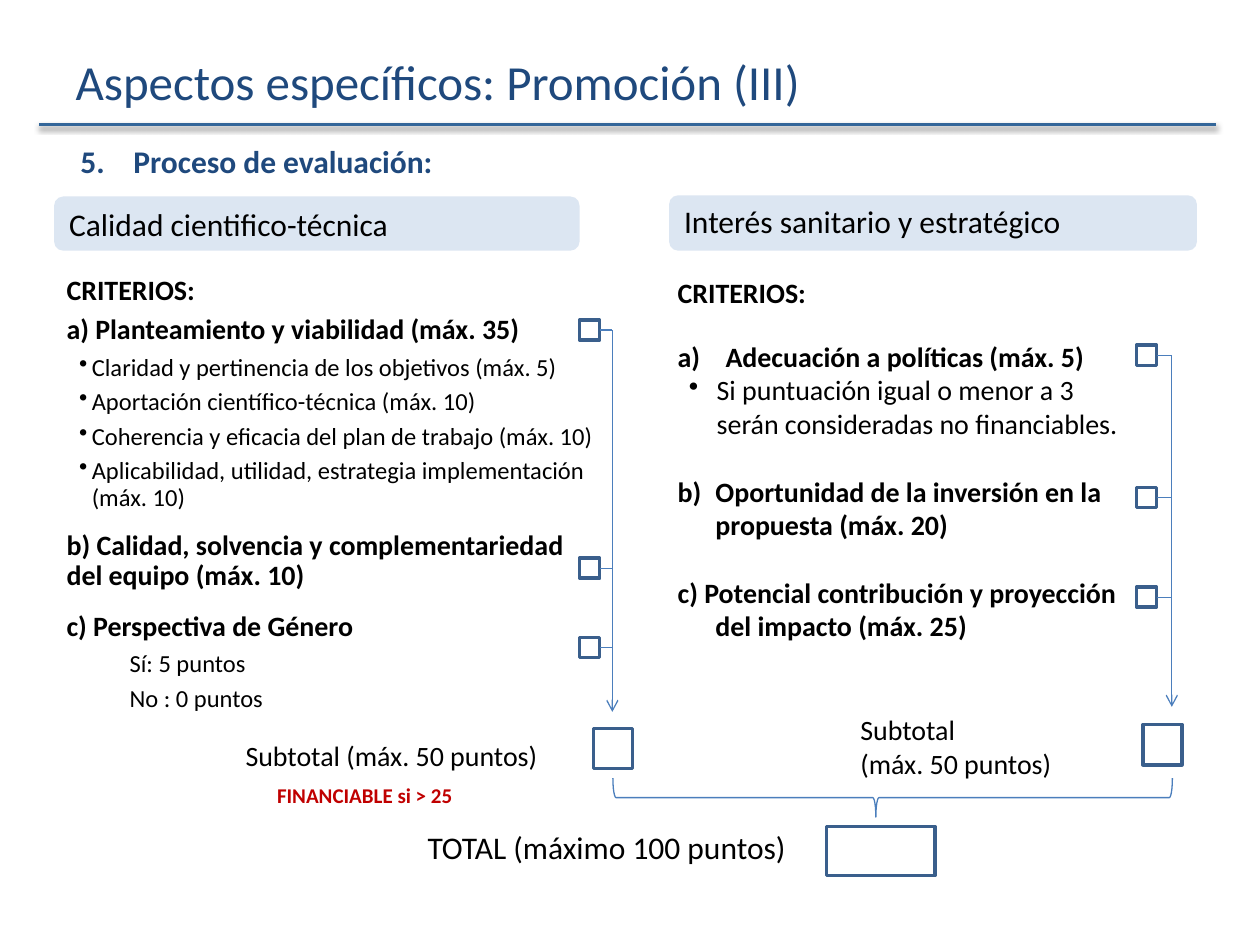
from lxml import etree
from pptx import Presentation
from pptx.dml.color import RGBColor
from pptx.enum.shapes import MSO_CONNECTOR, MSO_SHAPE
from pptx.enum.text import MSO_ANCHOR, PP_ALIGN
from pptx.oxml.ns import qn
from pptx.util import Inches, Pt

STRAIGHT = MSO_CONNECTOR.STRAIGHT
RECT, ROUNDED, BRACE = MSO_SHAPE.RECTANGLE, MSO_SHAPE.ROUNDED_RECTANGLE, MSO_SHAPE.LEFT_BRACE
TOP, MIDDLE = MSO_ANCHOR.TOP, MSO_ANCHOR.MIDDLE
LEFT, CENTER = PP_ALIGN.LEFT, PP_ALIGN.CENTER

FONT = "Calibri"
COLORS = {"navy": "1F497D", "rule": "336699", "box": "3A5F8C", "link": "4B7EBC",
          "header": "DCE6F2", "white": "FFFFFF", "black": "000000", "red": "C00000"}

# Content: each paragraph is (text, format values)
TITLE = "Aspectos específicos: Promoción (III)"
HEAD = {"size": 16, "bold": True, "spacing": 0.9, "after": 5.3}
ITEM = {"size": 14, "spacing": 0.9, "after": 4.6}
BULLET = {**ITEM, "margin": 0.2, "indent": -0.1, "bullet": "•"}
POINTS = {**ITEM, "margin": 0.5}
BOLD = {"size": 16, "bold": True}
HANGING = {**BOLD, "margin": 0.3, "indent": -0.3, "before": 19.5}

QUALITY = [
    ("CRITERIOS:", HEAD),
    ("a) Planteamiento y viabilidad (máx. 35)", HEAD),
    ("Claridad y pertinencia de los objetivos (máx. 5)", BULLET),
    ("Aportación científico-técnica (máx. 10)", BULLET),
    ("Coherencia y eficacia del plan de trabajo (máx. 10)", BULLET),
    ("Aplicabilidad, utilidad, estrategia implementación (máx. 10)", {**BULLET, "after": 0}),
    ("b) Calidad, solvencia y complementariedad del equipo (máx. 10)",
     {**HEAD, "before": 11.5, "after": 0}),
    ("c) Perspectiva de Género", {**HEAD, "before": 11.5}),
    ("Sí: 5 puntos", POINTS),
    ("No : 0 puntos", POINTS),
]
INTEREST = [
    ("CRITERIOS:", BOLD),
    ("Adecuación a políticas (máx. 5)",
     {**BOLD, "margin": 0.38, "indent": -0.38, "number": "alphaLcParenR", "before": 17}),
    ("Si puntuación igual o menor a 3 serán consideradas no financiables.",
     {"size": 16, "margin": 0.31, "indent": -0.22, "bullet": "•"}),
    ("b)\tOportunidad de la inversión en la propuesta (máx. 20)", HANGING),
    ("c) Potencial contribución y proyección del impacto (máx. 25)", HANGING),
]
COLUMNS = [
    {"header": ("Calidad cientifico-técnica", {"size": 18}), "header_at": (0.43, 1.56, 4.17, 0.43),
     "criteria": QUALITY, "criteria_at": (0.43, 2.14, 4.42, 3.75),
     "score_left": 4.6, "score_tops": (2.54, 4.43, 5.06), "trunk": 4.86, "arrow_end": 5.65,
     "subtotal": [("Subtotal (máx. 50 puntos)", {"size": 16})],
     "subtotal_at": (1.85, 5.81, 2.98, 0.37), "subtotal_box": (4.71, 5.78, 0.31, 0.32)},
    {"header": ("Interés sanitario y estratégico", {"size": 18, "spacing": 0.9}),
     "header_at": (5.31, 1.55, 4.19, 0.44),
     "criteria": INTEREST, "criteria_at": (5.28, 2.14, 3.72, 3.56),
     "score_left": 9.02, "score_tops": (2.74, 3.87, 4.66), "trunk": 9.3, "arrow_end": 5.61,
     "subtotal": [("Subtotal", {"size": 16}), ("(máx. 50 puntos)", {"size": 16})],
     "subtotal_at": (6.73, 5.61, 2.42, 0.64), "subtotal_box": (9.07, 5.75, 0.31, 0.32)},
]
# Free labels: paragraph, place, anchor
LABELS = [
    (("5.\tProceso de evaluación:", {"size": 18, "bold": True, "color": "navy",
                                     "margin": 0.42, "indent": -0.42}),
     (0.54, 1.08, 6.69, 0.4), TOP),
    (("FINANCIABLE si > 25", {"size": 12, "bold": True, "color": "red", "align": CENTER}),
     (1.54, 6.16, 2.71, 0.3), TOP),
    (("TOTAL (máximo 100 puntos)", {"size": 18, "align": CENTER}),
     (2.95, 6.47, 3.73, 0.51), MIDDLE),
]
TOTAL_BOX = (6.56, 6.56, 0.86, 0.39)
BRACE_AT = (6.93, 4.11, 0.31, 4.44)
SCORE = 0.16


def rgb(name):
    return RGBColor.from_string(COLORS[name])


def inches(place):
    return [Inches(value) for value in place]


def write(frame, paragraphs, anchor=TOP):
    frame.word_wrap = True
    frame.vertical_anchor = anchor
    for index, (text, style) in enumerate(paragraphs):
        para = frame.paragraphs[0] if index == 0 else frame.add_paragraph()
        props = para._p.get_or_add_pPr()
        props.set("marL", str(Inches(style.get("margin", 0))))
        props.set("indent", str(Inches(style.get("indent", 0))))
        if "bullet" in style:
            etree.SubElement(props, qn("a:buChar"), char=style["bullet"])
        if "number" in style:
            etree.SubElement(props, qn("a:buAutoNum"), type=style["number"])
        para.text = text
        values = {"alignment": style.get("align", LEFT), "line_spacing": style.get("spacing", 1.0),
                  "space_before": Pt(style.get("before", 0)),
                  "space_after": Pt(style.get("after", 0))}
        for name, value in values.items():
            setattr(para, name, value)
        span = para.runs[0].font
        for name, value in {"name": FONT, "size": Pt(style["size"]),
                            "bold": style.get("bold", False)}.items():
            setattr(span, name, value)
        span.color.rgb = rgb(style.get("color", "black"))


def add_text(page, paragraphs, place, anchor=TOP):
    write(page.shapes.add_textbox(*inches(place)).text_frame, paragraphs, anchor)


def add_shape(page, kind, place, fill=None, line=None, width=2):
    shape = page.shapes.add_shape(kind, *inches(place))
    shape.shadow.inherit = False
    if fill:
        shape.fill.solid()
        shape.fill.fore_color.rgb = rgb(fill)
    else:
        shape.fill.background()
    if line:
        shape.line.color.rgb = rgb(line)
        shape.line.width = Pt(width)
    else:
        shape.line.fill.background()
    return shape


def add_line(page, start, end, color="link", width=0.75, arrow=False):
    """Draw a line and return its effect list."""
    line = page.shapes.add_connector(STRAIGHT, *inches(start + end))
    line.line.color.rgb = rgb(color)
    line.line.width = Pt(width)
    if arrow:
        etree.SubElement(line.line._get_or_add_ln(), qn("a:tailEnd"), type="arrow")
    return etree.SubElement(line._element.spPr, qn("a:effectLst"))


def add_column(page, column):
    header = add_shape(page, ROUNDED, column["header_at"], "header")
    write(header.text_frame, [column["header"]], MIDDLE)
    add_text(page, column["criteria"], column["criteria_at"])
    add_text(page, column["subtotal"], column["subtotal_at"])
    add_shape(page, RECT, column["subtotal_box"], "white", "box")

    # Score boxes joined to the arrow that leads to the subtotal
    left, trunk = column["score_left"], column["trunk"]
    middles = [top + SCORE / 2 for top in column["score_tops"]]
    for top, middle in zip(column["score_tops"], middles):
        add_shape(page, RECT, (left, top, SCORE, SCORE), "white", "box")
        add_line(page, (left + SCORE, middle), (trunk, middle))
    add_line(page, (trunk, middles[0]), (trunk, column["arrow_end"]), arrow=True)


def main():
    deck = Presentation()
    deck.slide_width, deck.slide_height = Inches(10), Inches(7.5)
    page = deck.slides.add_slide(deck.slide_layouts[5])

    # Title and its shadowed rule
    title = page.shapes.title
    title.left, title.top, title.width, title.height = inches((0.5, 0.3, 9, 0.69))
    write(title.text_frame, [(TITLE, {"size": 28, "color": "navy"})], MIDDLE)
    effects = add_line(page, (0.31, 0.99), (9.65, 0.99), "rule", 2)
    shadow = etree.SubElement(effects, qn("a:outerShdw"), blurRad=str(Pt(3.1)),
                              dist=str(Pt(1.6)), dir="5400000", rotWithShape="0")
    shade = etree.SubElement(shadow, qn("a:srgbClr"), val=COLORS["black"])
    etree.SubElement(shade, qn("a:alpha"), val="38000")

    for column in COLUMNS:
        add_column(page, column)
    for para, place, anchor in LABELS:
        add_text(page, [para], place, anchor)

    # Brace that joins both subtotals into the total
    brace = add_shape(page, BRACE, BRACE_AT, line="link", width=0.75)
    brace.rotation = 270
    brace.adjustments[0], brace.adjustments[1] = 0.08, 0.47
    add_shape(page, RECT, TOTAL_BOX, "white", "box")

    deck.save("out.pptx")


if __name__ == "__main__":
    main()
